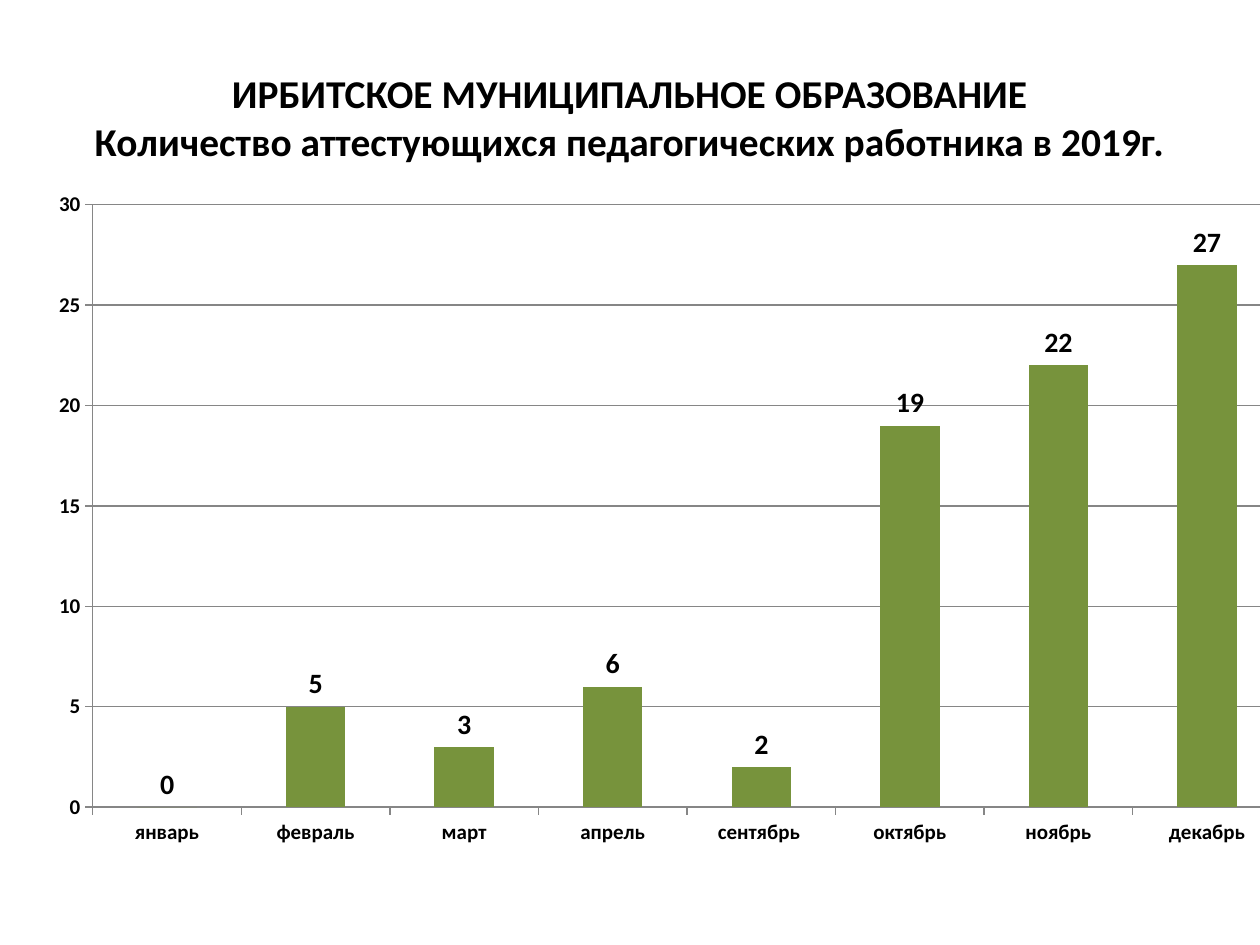
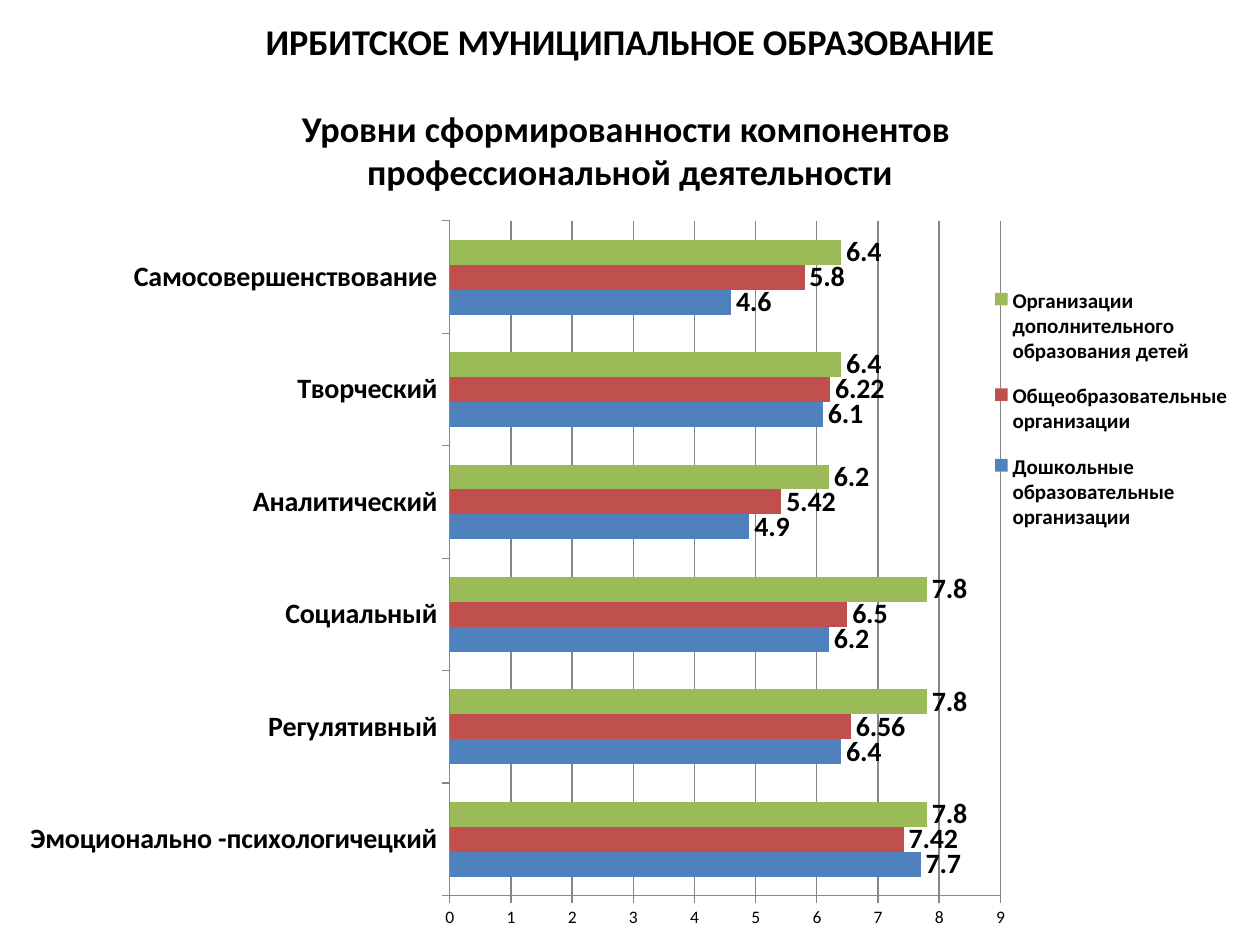
import pptx
import pptx.chart.data
import pptx.dml.color
import pptx.enum.chart
import pptx.enum.text
import pptx.oxml
import pptx.oxml.ns
import pptx.util

KINDS = pptx.enum.chart.XL_CHART_TYPE
WIDE, HIGH = pptx.util.Inches(10), pptx.util.Inches(7.5)
THEME = {
    "font": "Calibri", "text": "000000", "line": "868686",
    "olive": "77933C", "blue": "4F81BD", "red": "C0504D", "green": "9BBB59",
    "base": 10, "small": 12, "label": 16,
}
REGION = "ИРБИТСКОЕ МУНИЦИПАЛЬНОЕ ОБРАЗОВАНИЕ"


def color(name):
    return pptx.dml.color.RGBColor.from_string(THEME[name])


def apply(item, **values):
    for key, value in values.items():
        setattr(item, key, value)


def style(font, size, bold=True):
    apply(font, name=THEME["font"], size=pptx.util.Pt(size), bold=bold)
    font.color.rgb = color("text")


def frame(box):
    """Turn shares of the slide into lengths."""
    x, y, w, h = box
    return int(x * WIDE), int(y * HIGH), int(w * WIDE), int(h * HIGH)


def layout(part, index, box, inner=False):
    """Fix a chart part at shares of the chart's size."""
    for old in part.findall(pptx.oxml.ns.qn("c:layout")):
        part.remove(old)
    target = '<c:layoutTarget val="inner"/>' if inner else ""
    modes = '<c:xMode val="edge"/><c:yMode val="edge"/>'
    sizes = "".join(f'<c:{k} val="{v}"/>' for k, v in zip("xywh", box))
    part.insert(index, pptx.oxml.parse_xml(
        f'<c:layout {pptx.oxml.ns.nsdecls("c")}><c:manualLayout>'
        f"{target}{modes}{sizes}</c:manualLayout></c:layout>"))


def add_title(slide, box, text, size, gap=0):
    """Each line of text is a paragraph; gap is the space between them."""
    title = slide.shapes.title
    apply(title, **dict(zip(("left", "top", "width", "height"), frame(box))))
    body = title.text_frame
    apply(body, text=text, word_wrap=True,
          auto_size=pptx.enum.text.MSO_AUTO_SIZE.NONE,
          vertical_anchor=pptx.enum.text.MSO_ANCHOR.MIDDLE)
    for index, para in enumerate(body.paragraphs):
        apply(para, alignment=pptx.enum.text.PP_ALIGN.CENTER,
              space_before=pptx.util.Pt(gap if index else 0))
        for run in para.runs:
            style(run.font, size)


def set_axis(axis, size, bold=True):
    apply(axis, major_tick_mark=pptx.enum.chart.XL_TICK_MARK.OUTSIDE,
          minor_tick_mark=pptx.enum.chart.XL_TICK_MARK.NONE)
    style(axis.tick_labels.font, size, bold)
    axis.format.line.color.rgb = color("line")


def set_value(axis, top, step, bold):
    set_axis(axis, THEME["small" if bold else "base"], bold)
    apply(axis, minimum_scale=0, maximum_scale=top, major_unit=step,
          has_major_gridlines=True)
    axis.major_gridlines.format.line.color.rgb = color("line")


def add_legend(chart, box):
    chart.has_legend = True
    legend = chart.legend
    apply(legend, position=pptx.enum.chart.XL_LEGEND_POSITION.RIGHT,
          include_in_layout=False)
    style(legend.font, THEME["small"])
    layout(legend._element, 1, box)


def add_chart(slide, kind, box, plot, names, rows):
    """Rows hold a series name, a theme colour and the values."""
    data = pptx.chart.data.CategoryChartData()
    data.categories = names
    for name, _, values in rows:
        data.add_series(name, values)
    chart = slide.shapes.add_chart(kind, *frame(box), data).chart
    apply(chart, has_title=False, has_legend=False)
    style(chart.font, THEME["base"], False)
    layout(chart._chartSpace.chart.plotArea, 0, plot, inner=True)
    bars = chart.plots[0]
    apply(bars, gap_width=150, overlap=0, vary_by_categories=False)
    for series, (_, tint, _) in zip(bars.series, rows):
        series.format.fill.solid()
        series.format.fill.fore_color.rgb = color(tint)
        series.invert_if_negative = False
        labels = series.data_labels
        apply(labels, show_value=True,
              position=pptx.enum.chart.XL_LABEL_POSITION.OUTSIDE_END)
        style(labels.font, THEME["label"])
    return chart


def month_slide(slide):
    add_title(slide, (0.05, 0.04, 0.9, 0.167),
              f"{REGION}\vКоличество аттестующихся педагогических "
              "работника в 2019г.", 22.5)
    months = ("январь", "февраль", "март", "апрель",
              "сентябрь ", "октябрь", "ноябрь", "декабрь")
    rows = [("Количество", "olive", (0, 5, 3, 6, 2, 19, 22, 27))]
    chart = add_chart(slide, KINDS.COLUMN_CLUSTERED,
                      (-0.012, 0.164, 1.032, 0.924),
                      (0.083, 0.057, 0.914, 0.69), months, rows)
    set_axis(chart.category_axis, THEME["small"])
    set_value(chart.value_axis, 30, 5, True)


def level_slide(slide):
    add_title(slide, (0, 0.01, 1, 0.204),
              f"{REGION}\nУровни сформированности компонентов \v"
              "профессиональной деятельности", 20.7, gap=25)
    parts = ("Эмоционально -психологичецкий", "Регулятивный", "Социальный",
             "Аналитический", "Творческий", "Самосовершенствование")
    rows = [
        ("Дошкольные образовательные организации", "blue",
         (7.7, 6.4, 6.2, 4.9, 6.1, 4.6)),
        ("Общеобразовательные организации", "red",
         (7.42, 6.56, 6.5, 5.42, 6.22, 5.8)),
        ("Организации дополнительного образования детей", "green",
         (7.8, 7.8, 7.8, 6.2, 6.4, 6.4)),
    ]
    chart = add_chart(slide, KINDS.BAR_CLUSTERED, (0, 0.233, 1, 0.767),
                      (0.357, 0, 0.437, 0.932), parts, rows)
    set_axis(chart.category_axis, THEME["label"])
    set_value(chart.value_axis, 9, 1, False)
    add_legend(chart, (0.782, 0.065, 0.2, 0.39))


def main():
    deck = pptx.Presentation()
    apply(deck, slide_width=WIDE, slide_height=HIGH)
    for build in (month_slide, level_slide):
        build(deck.slides.add_slide(deck.slide_layouts.get_by_name("Title Only")))
    deck.save("out.pptx")


if __name__ == "__main__":
    main()
